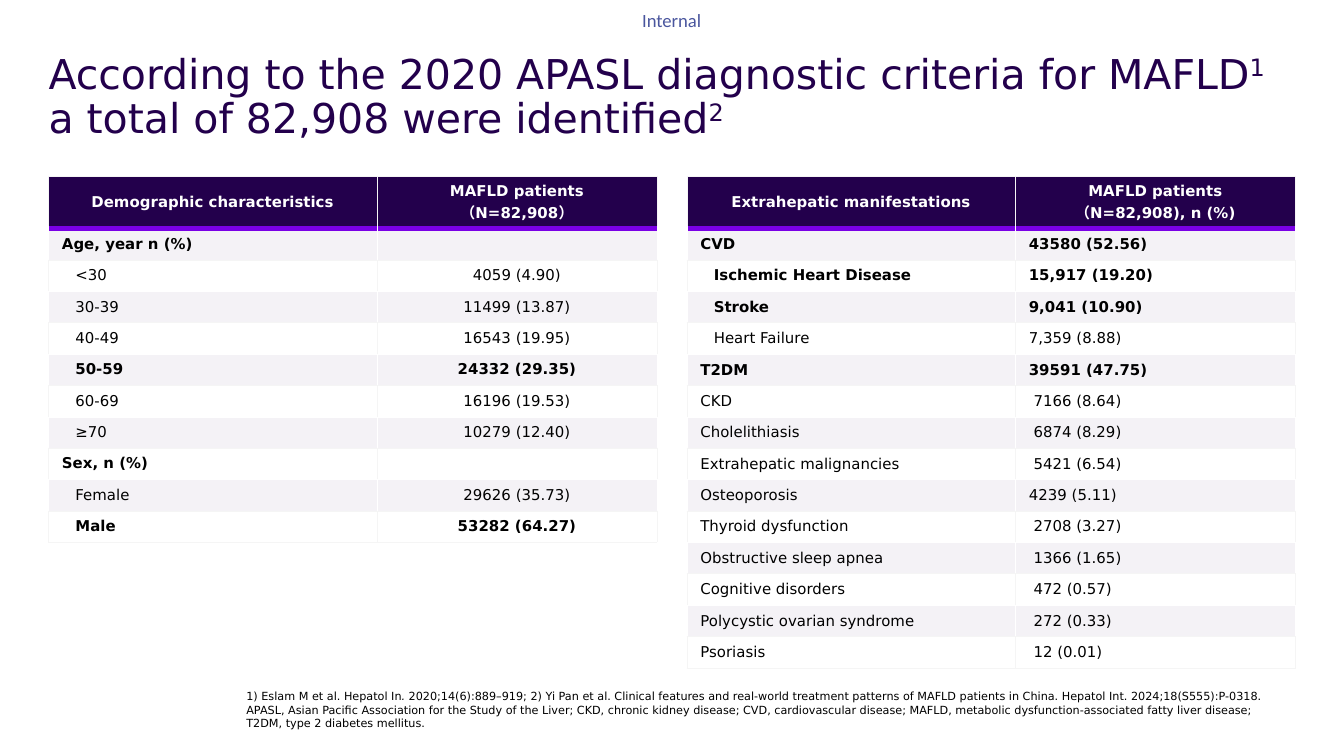
import copy

import pptx
import pptx.dml.color
import pptx.enum.text
import pptx.oxml.ns
import pptx.util
from lxml import etree

Pt = pptx.util.Pt
qn = pptx.oxml.ns.qn
ALIGN = pptx.enum.text.PP_ALIGN
ANCHOR = pptx.enum.text.MSO_ANCHOR

COLORS = {"navy": "23004C", "violet": "7A00E6", "band": "F4F2F6", "white": "FFFFFF",
          "edge": "F5F5F5", "black": "000000", "label": "4A569E"}
SANS = "DejaVu Sans"
TABLE_TOP, HEADER_HEIGHT, ROW_HEIGHT = 94.5, 27.9, 16.6
COLUMN_WIDTHS = (176, 150)
INDENT = 7.2
NUDGE = 2.5
NO_MARGINS = dict.fromkeys(("margin_left", "margin_top", "margin_right", "margin_bottom"), 0)

# Each row: label, value, bold, label indent, value indent
DEMOGRAPHICS = [
    ("Age, year n (%)", "", True, 0, 0),
    ("<30", "4059 (4.90)", False, INDENT, 0),
    ("30-39", "11499 (13.87)", False, INDENT, 0),
    ("40-49", "16543 (19.95)", False, INDENT, 0),
    ("50-59", "24332 (29.35)", True, INDENT, 0),
    ("60-69", "16196 (19.53)", False, INDENT, 0),
    ("≥70", "10279 (12.40)", False, INDENT, 0),
    ("Sex, n (%)", "", True, 0, 0),
    ("Female", "29626 (35.73)", False, INDENT, 0),
    ("Male", "53282 (64.27)", True, INDENT, 0),
]
MANIFESTATIONS = [
    ("CVD", "43580 (52.56)", True, 0, 0),
    ("Ischemic Heart Disease", "15,917 (19.20)", True, INDENT, 0),
    ("Stroke", "9,041 (10.90)", True, INDENT, 0),
    ("Heart Failure", "7,359 (8.88)", False, INDENT, 0),
    ("T2DM", "39591 (47.75)", True, 0, 0),
    ("CKD", "7166 (8.64)", False, 0, NUDGE),
    ("Cholelithiasis", "6874 (8.29)", False, 0, NUDGE),
    ("Extrahepatic malignancies", "5421 (6.54)", False, 0, NUDGE),
    ("Osteoporosis", "4239 (5.11)", False, 0, 0),
    ("Thyroid dysfunction", "2708 (3.27)", False, 0, NUDGE),
    ("Obstructive sleep apnea", "1366 (1.65)", False, 0, NUDGE),
    ("Cognitive disorders", "472 (0.57)", False, 0, NUDGE),
    ("Polycystic ovarian syndrome", "272 (0.33)", False, 0, NUDGE),
    ("Psoriasis", "12 (0.01)", False, 0, NUDGE),
]
TITLE = [("According to the 2020 APASL diagnostic criteria for MAFLD", False), ("1 ", True),
         ("a total of 82,908 were identified", False), ("2", True)]
FOOTNOTES = [
    [("1) Eslam M et al. Hepatol In", False), (".", True),
     (" 2020;14(6):889–919; 2) Yi Pan et al. Clinical features and real-world treatment "
      "patterns of MAFLD patients in China. Hepatol Int. 2024;18(S555):P-0318.", False)],
    [("APASL, Asian Pacific Association for the Study of the Liver; CKD, chronic kidney "
      "disease; CVD, cardiovascular disease; MAFLD, metabolic dysfunction-associated fatty "
      "liver disease; \vT2DM, type 2 diabetes mellitus.", False)],
]


def apply_format(target, **values):
    for name, value in values.items():
        setattr(target, name, value)


def add_text(paragraph, text, size, color, name=SANS, **font):
    """Add text, with a line break at each vertical tab."""
    for number, line in enumerate(text.split("\v")):
        if number:
            paragraph.add_line_break()
        run = paragraph.add_run()
        run.text = line
        apply_format(run.font, size=Pt(size), name=name, **font)
        run.font.color.rgb = pptx.dml.color.RGBColor.from_string(COLORS[color])
    # Line breaks take the size of the text around them
    for line_break in paragraph._p.findall(qn("a:br")):
        line_break.append(copy.deepcopy(run.font._element))
    return run


def place(shape, left, top, width, height):
    apply_format(shape, left=Pt(left), top=Pt(top), width=Pt(width), height=Pt(height))


def add_box(slide, left, top, width, height, **frame):
    box = slide.shapes.add_textbox(Pt(left), Pt(top), Pt(width), Pt(height))
    apply_format(box.text_frame, **NO_MARGINS, **frame)
    return box.text_frame


def set_borders(cell, edges):
    """Borders come before the fill in the cell properties."""
    properties = cell._tc.get_or_add_tcPr()
    for position, side in enumerate(("lnL", "lnR", "lnT", "lnB")):
        color, width = edges.get(side, edges["all"])
        line = etree.Element(qn(f"a:{side}"), w=str(int(Pt(width))))
        fill = etree.SubElement(line, qn("a:solidFill"))
        etree.SubElement(fill, qn("a:srgbClr"), val=COLORS[color])
        properties.insert(position, line)


def fill_cell(cell, text, fill, edges, anchor, align, indent=0, color="black", bold=False):
    cell.fill.solid()
    cell.fill.fore_color.rgb = pptx.dml.color.RGBColor.from_string(COLORS[fill])
    set_borders(cell, edges)
    cell.vertical_anchor = anchor
    paragraph = cell.text_frame.paragraphs[0]
    paragraph.alignment = align
    if indent:
        paragraph._p.get_or_add_pPr().set("marL", str(int(Pt(indent))))
    if text:
        add_text(paragraph, text, 8, color, bold=bold)
    else:
        etree.SubElement(paragraph._p, qn("a:endParaRPr"), sz="800")


def add_patient_table(slide, left, headers, rows, anchor, value_align):
    height = HEADER_HEIGHT + ROW_HEIGHT * len(rows)
    table = slide.shapes.add_table(len(rows) + 1, 2, Pt(left), Pt(TABLE_TOP),
                                   Pt(sum(COLUMN_WIDTHS)), Pt(height)).table
    apply_format(table, first_row=False, horz_banding=False)
    for column, width in zip(table.columns, COLUMN_WIDTHS):
        column.width = Pt(width)
    for number, row in enumerate(table.rows):
        row.height = Pt(ROW_HEIGHT if number else HEADER_HEIGHT)

    # Header row with its heavy rule
    rule = ("violet", 2.83)
    for column, header in enumerate(headers):
        fill_cell(table.cell(0, column), header, "navy", {"all": ("edge", 0.2), "lnB": rule},
                  ANCHOR.MIDDLE, ALIGN.CENTER, color="white", bold=True)

    # Banded body rows
    for number, (label, value, bold, label_indent, value_indent) in enumerate(rows, 1):
        fill, edge = ("band", "white") if number % 2 else ("white", "edge")
        edges = {"all": (edge, 0.2)}
        if number == 1:
            edges["lnT"] = rule
        fill_cell(table.cell(number, 0), label, fill, edges, anchor, ALIGN.LEFT,
                  label_indent, bold=bold)
        fill_cell(table.cell(number, 1), value, fill, edges, anchor, value_align,
                  value_indent, bold=bold)


def add_title(slide):
    title = slide.shapes.title
    place(title, 26, 28.8, 668, 57)
    apply_format(title.text_frame, **NO_MARGINS, word_wrap=True, vertical_anchor=ANCHOR.TOP,
                 auto_size=pptx.enum.text.MSO_AUTO_SIZE.NONE)
    paragraph = title.text_frame.paragraphs[0]
    apply_format(paragraph, alignment=ALIGN.LEFT, line_spacing=0.9, space_before=Pt(0))
    for text, raised in TITLE:
        run = add_text(paragraph, text, 22, "navy")
        if raised:
            run.font._element.set("baseline", "30000")


def add_footnotes(slide):
    frame = add_box(slide, 132, 365, 562, 26, word_wrap=True, vertical_anchor=ANCHOR.BOTTOM)
    for number, parts in enumerate(FOOTNOTES):
        paragraph = frame.add_paragraph() if number else frame.paragraphs[0]
        for text, italic in parts:
            add_text(paragraph, text, 6, "black", italic=italic)


def main():
    deck = pptx.Presentation()
    apply_format(deck, slide_width=Pt(720), slide_height=Pt(405))
    slide = deck.slides.add_slide(deck.slide_layouts[5])

    # Classification label and title
    label = add_box(slide, 344, 5, 34, 12, word_wrap=False)
    add_text(label.paragraphs[0], "Internal", 10, "label", name="Calibri")
    add_title(slide)

    # Patient tables
    add_patient_table(slide, 26, ("Demographic characteristics", "MAFLD patients\v（N=82,908）"),
                      DEMOGRAPHICS, ANCHOR.MIDDLE, ALIGN.CENTER)
    add_patient_table(slide, 368, ("Extrahepatic manifestations",
                                   "MAFLD patients\v（N=82,908), n (%)"),
                      MANIFESTATIONS, ANCHOR.BOTTOM, ALIGN.LEFT)

    # References and abbreviations
    add_footnotes(slide)
    deck.save("out.pptx")


if __name__ == "__main__":
    main()
